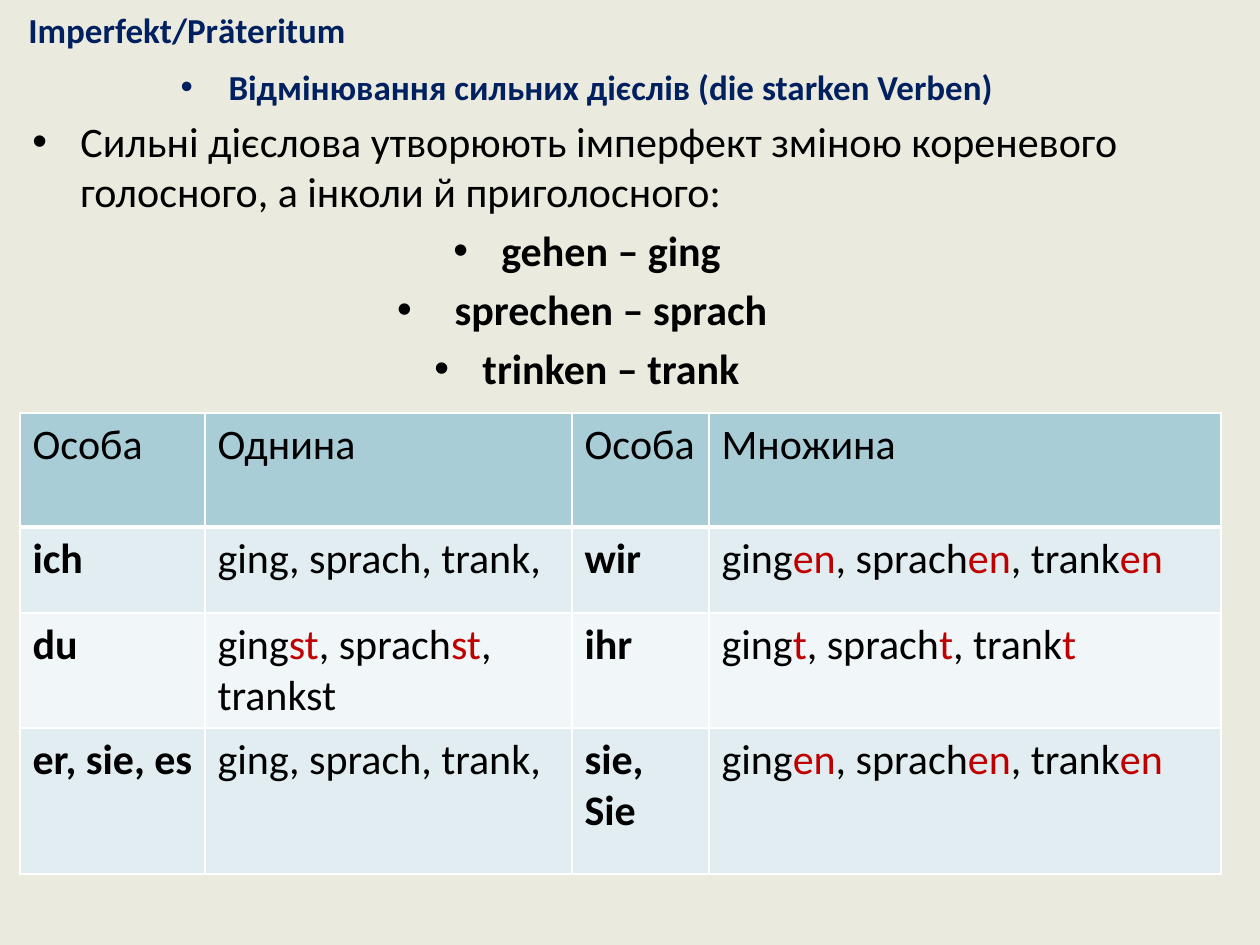
from lxml import etree
from pptx import Presentation
from pptx.dml.color import RGBColor
from pptx.enum.text import MSO_ANCHOR, PP_ALIGN
from pptx.oxml.ns import qn
from pptx.util import Pt

CENTER, LEFT = PP_ALIGN.CENTER, PP_ALIGN.LEFT
MIDDLE = MSO_ANCHOR.MIDDLE
EMU_PER_PX = 914400 / 126
FONT = "Calibri"
COLORS = {
    "background": "EAEBDE",
    "heading": "002060",
    "text": "000000",
    "ending": "C00000",
    "header": "A8CDD7",
    "odd": "E1EDF0",
    "even": "F1F6F8",
    "border": "FFFFFF",
}

TITLE = "Imperfekt/Prӓteritum"
BULLETS = [
    ("Відмінювання сильних дієслів (die starken Verben)", 20, "heading", True, CENTER),
    ("Сильні дієслова утворюють імперфект зміною кореневого "
     "голосного, а інколи й приголосного:", 24, "text", False, LEFT),
    ("gehen – ging", 24, "text", True, CENTER),
    (" sprechen – sprach ", 24, "text", True, CENTER),
    ("trinken – trank", 24, "text", True, CENTER),
]
SINGULAR = "ging, sprach, trank,"
PLURAL = "ging|en|, sprach|en|, trank|en"
CONJUGATION = [
    ["Особа", "Однина", "Особа", "Множина"],
    ["ich", SINGULAR, "wir", PLURAL],
    ["du", "ging|st|, sprach|st|, trankst", "ihr", "ging|t|, sprach|t|, trank|t"],
    ["er, sie, es", SINGULAR, "sie, Sie", PLURAL],
]
COLUMN_WIDTHS = [185, 367, 137, 512]
ROW_HEIGHTS = [114, 86, 115, 146]


def px(length):
    return round(length * EMU_PER_PX)


def color(name):
    return RGBColor.from_string(COLORS[name])


def set_font(font, size, color_name, bold):
    font.name = FONT
    font.size = Pt(size)
    font.bold = bold
    font.color.rgb = color(color_name)


def add_bullet(paragraph, indent):
    properties = paragraph._p.get_or_add_pPr()
    properties.set("marL", str(px(indent)))
    properties.set("indent", str(-px(indent)))
    etree.SubElement(properties, qn("a:buFont"), typeface="Arial")
    etree.SubElement(properties, qn("a:buChar"), char="•")


def add_border(cell, side, width):
    line = etree.SubElement(cell._tc.get_or_add_tcPr(), qn(f"a:ln{side}"), w=str(Pt(width)))
    fill = etree.SubElement(line, qn("a:solidFill"))
    etree.SubElement(fill, qn("a:srgbClr"), val=COLORS["border"])


def place_title(slide, left, top, width, height):
    title = slide.shapes.title
    title.left, title.top, title.width, title.height = map(px, (left, top, width, height))
    frame = title.text_frame
    frame.text = TITLE
    frame.vertical_anchor = MIDDLE
    paragraph = frame.paragraphs[0]
    paragraph.alignment = CENTER
    set_font(paragraph.font, 20, "heading", True)


def add_rules(slide, left, top, width, height):
    frame = slide.shapes.add_textbox(*map(px, (left, top, width, height))).text_frame
    frame.word_wrap = True
    for index, (text, size, color_name, bold, alignment) in enumerate(BULLETS):
        paragraph = frame.add_paragraph() if index else frame.paragraphs[0]
        paragraph.text = text
        paragraph.alignment = alignment
        paragraph.space_before = Pt(size * 0.2)
        add_bullet(paragraph, 48)
        set_font(paragraph.font, size, color_name, bold)


def fill_cell(cell, text, row, column):
    for side in "LRTB":
        under_header = (row, side) in ((0, "B"), (1, "T"))
        add_border(cell, side, 3 if under_header else 1)
    cell.fill.solid()
    cell.fill.fore_color.rgb = color("header" if row == 0 else "odd" if row % 2 else "even")
    paragraph = cell.text_frame.paragraphs[0]
    set_font(paragraph.font, 24, "text", row > 0 and column % 2 == 0)
    for index, part in enumerate(text.split("|")):
        run = paragraph.add_run()
        run.text = part
        set_font(run.font, 24, "ending" if index % 2 else "text", paragraph.font.bold)


def add_conjugation_table(slide, left, top):
    box = (left, top, sum(COLUMN_WIDTHS), sum(ROW_HEIGHTS))
    table = slide.shapes.add_table(
        len(ROW_HEIGHTS), len(COLUMN_WIDTHS), *map(px, box)).table
    for column, width in zip(table.columns, COLUMN_WIDTHS):
        column.width = px(width)
    for row, height in zip(table.rows, ROW_HEIGHTS):
        row.height = px(height)
    for row, texts in enumerate(CONJUGATION):
        for column, text in enumerate(texts):
            fill_cell(table.cell(row, column), text, row, column)


def main():
    presentation = Presentation()
    presentation.slide_width, presentation.slide_height = px(1260), px(945)
    slide = presentation.slides.add_slide(presentation.slide_layouts[5])
    slide.background.fill.solid()
    slide.background.fill.fore_color.rgb = color("background")
    add_rules(slide, 20, 59, 1134, 624)
    add_conjugation_table(slide, 20, 413)
    place_title(slide, 0, 0, 374, 59)
    presentation.save("out.pptx")


if __name__ == "__main__":
    main()
